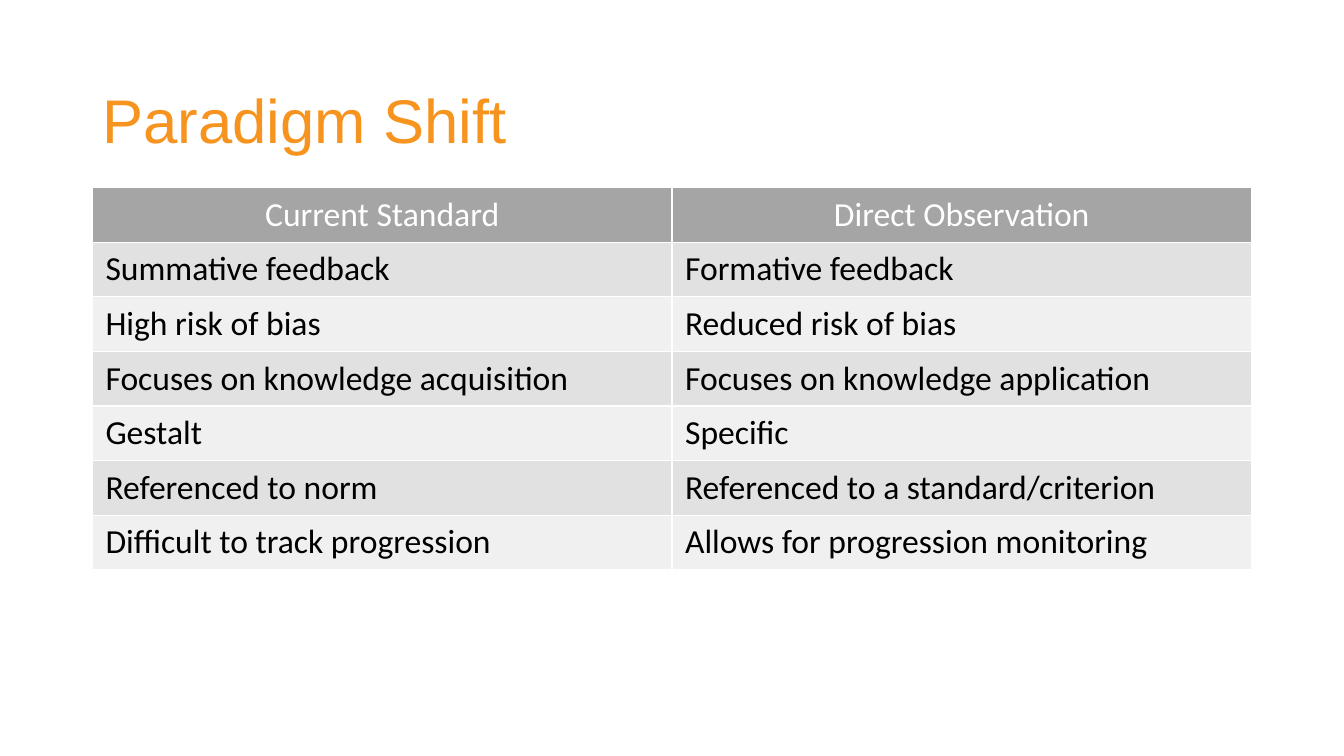
from lxml import etree
from pptx import Presentation
from pptx import util as u
from pptx.dml.color import RGBColor
from pptx.enum import text
from pptx.oxml import ns

ORANGE = RGBColor(0xF6, 0x94, 0x1F)
WHITE = RGBColor(0xFF, 0xFF, 0xFF)
BLACK = RGBColor(0, 0, 0)
HEADER_GREY = RGBColor(0xA5, 0xA5, 0xA5)
BAND_GREYS = (RGBColor(0xE1, 0xE1, 0xE1), RGBColor(0xF0, 0xF0, 0xF0))

ROWS = [
    ("Current Standard", "Direct Observation"),
    ("Summative feedback", "Formative feedback"),
    ("High risk of bias", "Reduced risk of bias"),
    ("Focuses on knowledge acquisition", "Focuses on knowledge application"),
    ("Gestalt", "Specific"),
    ("Referenced to norm", "Referenced to a standard/criterion"),
    ("Difficult to track progression", "Allows for progression monitoring"),
]


def apply_format(target, values):
    for name, value in values.items():
        setattr(target, name, value)


def write(frame, words, align, color, **font):
    para = frame.paragraphs[0]
    para.alignment = align
    span = para.add_run()
    span.text = words
    apply_format(span.font, font)
    span.font.color.rgb = color
    return para


def add_borders(cell, color, width):
    properties = cell._tc.get_or_add_tcPr()
    for side in ("lnL", "lnR", "lnT", "lnB"):
        line = etree.SubElement(properties, ns.qn(f"a:{side}"), w=str(width))
        fill = etree.SubElement(line, ns.qn("a:solidFill"))
        etree.SubElement(fill, ns.qn("a:srgbClr"), val=str(color))


def place_title(page, words, left, top, width, height):
    title = page.shapes.title
    apply_format(title, dict(left=left, top=top, width=width, height=height))
    apply_format(title.text_frame, dict(
        word_wrap=True,
        auto_size=text.MSO_AUTO_SIZE.NONE,
        vertical_anchor=text.MSO_ANCHOR.MIDDLE,
    ))
    para = write(title.text_frame, words, text.PP_ALIGN.LEFT, ORANGE,
                 name="Arial", size=u.Pt(44))
    para.line_spacing = 0.9


def add_comparison(page, rows, left, top, width, height):
    """Add a table with a header row and banded rows that fill the box."""
    table = page.shapes.add_table(
        len(rows), len(rows[0]), left, top, width, height).table
    for row_index, row in enumerate(rows):
        header = row_index == 0
        background = HEADER_GREY if header else BAND_GREYS[(row_index - 1) % 2]
        align = text.PP_ALIGN.CENTER if header else text.PP_ALIGN.LEFT
        for column_index, words in enumerate(row):
            cell = table.cell(row_index, column_index)
            apply_format(cell, dict(
                margin_left=u.Cm(0.33), margin_right=u.Cm(0.33),
                margin_top=u.Cm(0.17), margin_bottom=u.Cm(0.17),
            ))
            add_borders(cell, WHITE, u.Pt(1))
            cell.fill.solid()
            cell.fill.fore_color.rgb = background
            write(cell.text_frame, words, align, WHITE if header else BLACK,
                  name="Calibri", size=u.Pt(24), bold=False)


def main():
    deck = Presentation()
    apply_format(deck, dict(slide_width=u.Cm(33.87), slide_height=u.Cm(19.05)))
    page = deck.slides.add_slide(deck.slide_layouts.get_by_name("Title Only"))
    left, width = u.Cm(2.33), u.Cm(29.21)
    place_title(page, "Paradigm Shift", left, u.Cm(1.27), width, u.Cm(3.68))
    add_comparison(page, ROWS, left, u.Cm(4.73), width, u.Cm(9.63))
    deck.save("out.pptx")


if __name__ == "__main__":
    main()
